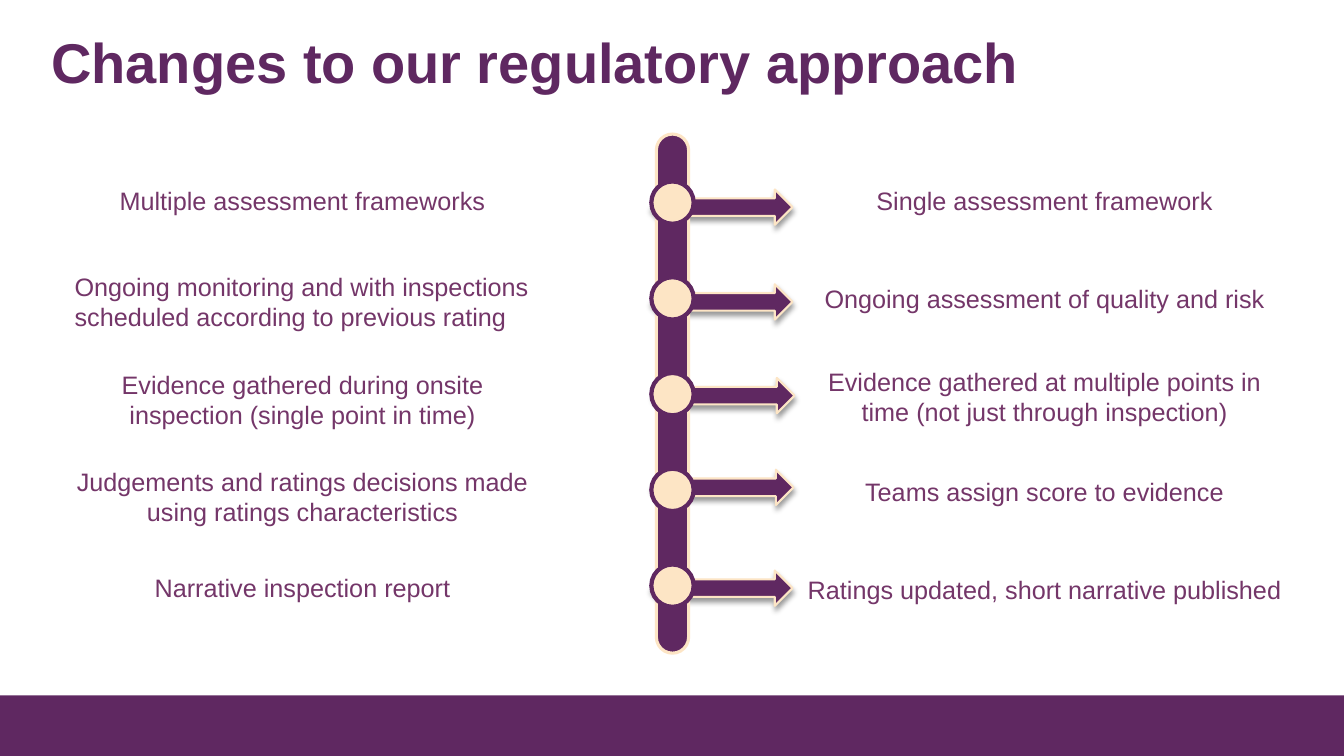
import pptx
import pptx.dml.color
import pptx.enum.shapes
import pptx.enum.text
import pptx.oxml
import pptx.oxml.ns
import pptx.util
from pptx.util import Inches

PURPLE = pptx.dml.color.RGBColor(0x5F, 0x28, 0x61)
PLUM = pptx.dml.color.RGBColor(0x74, 0x36, 0x69)
CREAM = pptx.dml.color.RGBColor(0xFD, 0xE5, 0xC5)

SHAPES = pptx.enum.shapes.MSO_SHAPE
ALIGN = pptx.enum.text.PP_ALIGN
ANCHOR = pptx.enum.text.MSO_ANCHOR

FIRST_NODE_TOP = 1.8
NODE_STEP = 0.95
NODE_SIZE = 0.42
NODE_LEFT = 6.46
LABEL_WIDTH = 4.96

ARROWS = [(6.46, 1.88), (6.46, 2.82), (6.48, 3.75), (6.47, 4.66), (6.46, 5.66)]

BEFORE = [
    (1.71, 0.56, "Multiple assessment frameworks"),
    (2.71, 0.56, "Ongoing monitoring and with inspections scheduled according to previous rating"),
    (3.64, 0.65, "Evidence gathered during onsite inspection (single point in time)"),
    (4.6, 0.65, "Judgements and ratings decisions made using ratings characteristics"),
    (5.58, 0.49, "Narrative inspection report"),
]
AFTER = [
    (1.69, 0.59, "Single assessment framework"),
    (2.67, 0.58, "Ongoing assessment of quality and risk"),
    (3.61, 0.65, "Evidence gathered at multiple points in time (not just through inspection)"),
    (4.55, 0.65, "Teams assign score to evidence"),
    (5.6, 0.49, "Ratings updated, short narrative published"),
]

SHADOW_XML = (
    '<a:outerShdw %s blurRad="50800" dist="38100" dir="5400000" algn="t" rotWithShape="0">'
    '<a:srgbClr val="000000"><a:alpha val="40000"/></a:srgbClr></a:outerShdw>'
    % pptx.oxml.ns.nsdecls("a")
)


def add_block(slide, kind, left, top, width, height, fill, line=None, line_width=0):
    shape = slide.shapes.add_shape(
        kind, Inches(left), Inches(top), Inches(width), Inches(height)
    )
    shape.shadow.inherit = False
    shape.fill.solid()
    shape.fill.fore_color.rgb = fill
    if line is None:
        shape.line.fill.background()
    else:
        shape.line.color.rgb = line
        shape.line.width = pptx.util.Pt(line_width)
    return shape


def add_arrow(slide, left, top):
    arrow = add_block(slide, SHAPES.LEFT_RIGHT_ARROW, left, top, 1.4, 0.35, PURPLE, CREAM, 1.5)
    effects = arrow.element.spPr.find(pptx.oxml.ns.qn("a:effectLst"))
    effects.append(pptx.oxml.parse_xml(SHADOW_XML))


def add_text(slide, left, top, width, height, text, size, color,
             bold=False, alignment=ALIGN.CENTER, anchor=ANCHOR.MIDDLE):
    box = slide.shapes.add_textbox(Inches(left), Inches(top), Inches(width), Inches(height))
    frame = box.text_frame
    frame.word_wrap = True
    frame.vertical_anchor = anchor
    frame.text = text
    paragraph = frame.paragraphs[0]
    paragraph.alignment = alignment
    font = paragraph.runs[0].font
    font.name = "Arial"
    font.size = pptx.util.Pt(size)
    font.bold = bold
    font.color.rgb = color
    return box


def add_labels(slide, left, labels):
    return [
        add_text(slide, left, top, LABEL_WIDTH, height, text, 18, PLUM)
        for top, height, text in labels
    ]


def main():
    presentation = pptx.Presentation()
    presentation.slide_width = Inches(13.33)
    presentation.slide_height = Inches(7.5)
    slide = presentation.slides.add_slide(presentation.slide_layouts[6])

    add_block(slide, SHAPES.RECTANGLE, 0, 6.9, 13.33, 0.6, PURPLE)
    for left, top in ARROWS:
        add_arrow(slide, left, top)
    spine = add_block(slide, SHAPES.ROUNDED_RECTANGLE, 6.51, 1.33, 0.32, 5.15, PURPLE, CREAM, 2.25)
    spine.adjustments[0] = 0.5
    add_text(slide, 0.41, 0.22, 12.51, 1.45, "Changes to our regulatory approach",
             40, PURPLE, True, ALIGN.LEFT, ANCHOR.TOP)
    for index in range(len(ARROWS)):
        add_block(slide, SHAPES.FLOWCHART_CONNECTOR, NODE_LEFT, FIRST_NODE_TOP + index * NODE_STEP,
                  NODE_SIZE, NODE_SIZE, CREAM, PURPLE, 3)

    before_labels = add_labels(slide, 0.52, BEFORE)
    monitoring = before_labels[1].text_frame
    monitoring.margin_left = Inches(0.22)
    monitoring.paragraphs[0].alignment = ALIGN.LEFT
    add_labels(slide, 7.88, AFTER)

    presentation.save("out.pptx")


if __name__ == "__main__":
    main()
